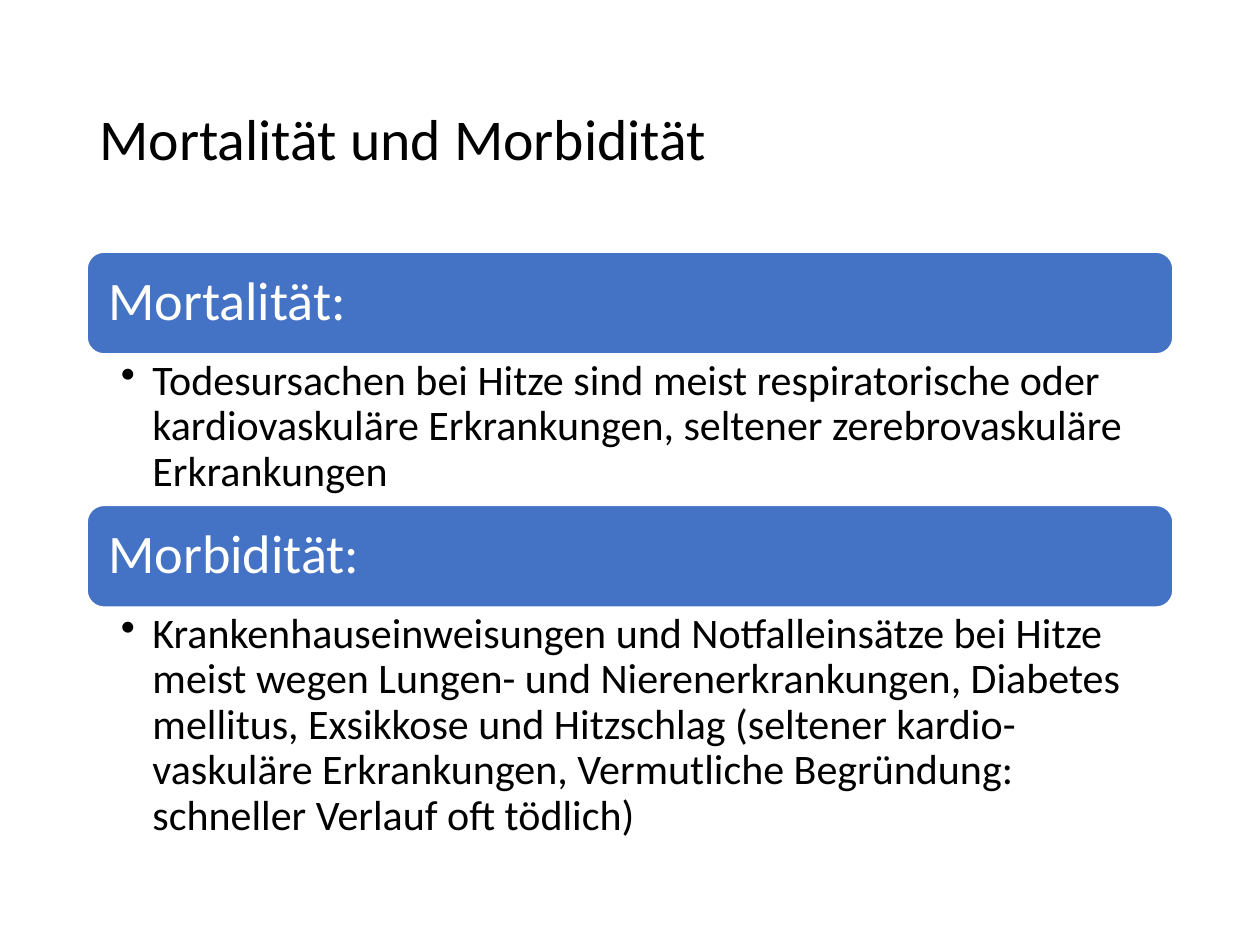
"""Build the slide on mortality and morbidity during heat."""
from lxml.etree import SubElement
from pptx import Presentation
from pptx.dml.color import RGBColor
from pptx.enum.shapes import MSO_SHAPE as Preset
from pptx.enum.text import MSO_ANCHOR as Anchor, PP_ALIGN as Align
from pptx.oxml.ns import qn
from pptx.util import Inches, Pt


def color(hex_code):
    return RGBColor.from_string(hex_code)


def write(shape, text, size, hex_code, anchor, insets):
    frame = shape.text_frame
    frame.word_wrap = True
    frame.vertical_anchor = anchor
    side_left, side_right, edge = insets
    frame.margin_left, frame.margin_right = Inches(side_left), Inches(side_right)
    frame.margin_top = frame.margin_bottom = Inches(edge)
    paragraph = frame.paragraphs[0]
    paragraph.alignment = Align.LEFT
    paragraph.line_spacing = 0.9
    run = paragraph.add_run()
    run.text = text
    run.font.name = "Calibri"
    run.font.size = Pt(size)
    run.font.color.rgb = color(hex_code)
    return paragraph


prs = Presentation()
prs.slide_width, prs.slide_height = Inches(10), Inches(7.5)
slide = prs.slides.add_slide(prs.slide_layouts[6])

left = Inches(0.69)
width = prs.slide_width - 2 * left
bar_height = Inches(0.81)

title = slide.shapes.add_textbox(left, Inches(0.4), width, Inches(1.45))
write(title, "Mortalität und Morbidität", 33, "000000", Anchor.MIDDLE, (0.1, 0.1, 0.05))

sections = [
    ("Mortalität:", 1.2,
     "Todesursachen bei Hitze sind meist respiratorische oder kardiovaskuläre "
     "Erkrankungen, seltener zerebrovaskuläre Erkrankungen"),
    ("Morbidität:", 1.93,
     "Krankenhauseinweisungen und Notfalleinsätze bei Hitze meist wegen Lungen- und "
     "Nierenerkrankungen, Diabetes mellitus, Exsikkose und Hitzschlag (seltener "
     "kardio-vaskuläre Erkrankungen, Vermutliche Begründung: schneller Verlauf oft tödlich)"),
]

top = Inches(2)
for heading, detail_height, detail in sections:
    bar = slide.shapes.add_shape(Preset.ROUNDED_RECTANGLE, left, top, width, bar_height)
    bar.shadow.inherit = False
    bar.fill.solid()
    bar.fill.fore_color.rgb = color("4472C4")
    bar.line.color.rgb = color("FFFFFF")
    bar.line.width = Pt(1)
    write(bar, heading, 31, "FFFFFF", Anchor.MIDDLE, (0.13, 0.13, 0.13))
    top += bar_height

    body = slide.shapes.add_textbox(left, top, width, Inches(detail_height))
    bullet = write(body, detail, 24, "000000", Anchor.TOP, (0.27, 0.24, 0.04))
    bullet.level = 1
    properties = bullet._p.get_or_add_pPr()
    properties.set("marL", str(Inches(0.25)))
    properties.set("indent", str(Inches(-0.25)))
    SubElement(properties, qn("a:buChar"), char="•")
    top += Inches(detail_height)

prs.save("out.pptx")
